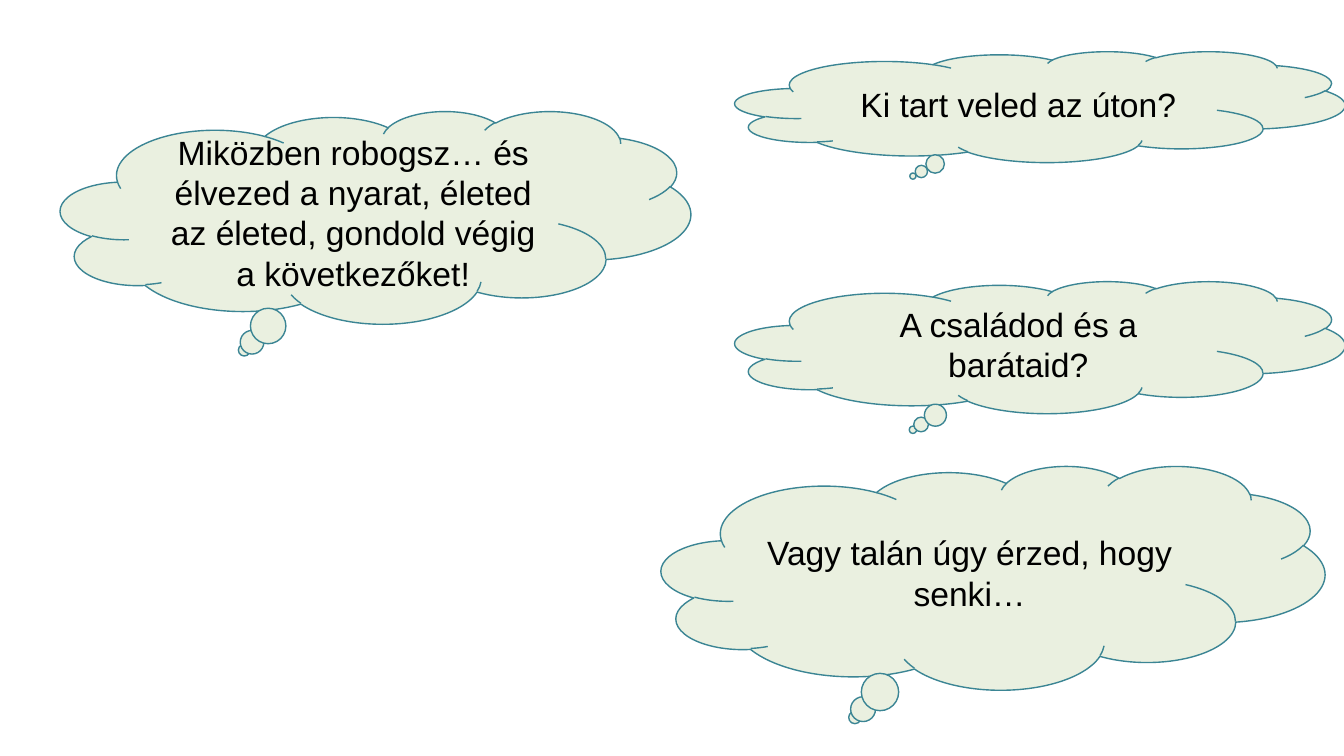
from pptx import Presentation
from pptx.dml.color import RGBColor
from pptx.enum.shapes import MSO_SHAPE
from pptx.enum.text import MSO_ANCHOR, PP_ALIGN
from pptx.util import Inches, Pt

PALE_GREEN = RGBColor(0xEA, 0xF0, 0xE0)
TEAL = RGBColor(0x3B, 0x85, 0x94)
BLACK = RGBColor(0x00, 0x00, 0x00)

# thought, (left, top, width, height) in inches
THOUGHTS = [
    ("Miközben robogsz… és élvezed a nyarat, életed az életed, gondold végig a következőket!",
     (0.6, 1.1, 6.25, 2.11)),
    ("Ki tart veled az úton?", (7.29, 0.51, 6.05, 1.1)),
    ("A családod és a barátaid?", (7.29, 2.79, 6.05, 1.31)),
    ("Vagy talán úgy érzed, hogy senki…", (6.56, 4.62, 6.58, 2.22)),
]


def add_thought_cloud(slide, thought, place):
    cloud = slide.shapes.add_shape(MSO_SHAPE.CLOUD_CALLOUT, *map(Inches, place))
    cloud.shadow.inherit = False
    cloud.fill.solid()
    cloud.fill.fore_color.rgb = PALE_GREEN
    cloud.line.color.rgb = TEAL
    cloud.line.width = Pt(1)

    frame = cloud.text_frame
    frame.word_wrap = True
    frame.vertical_anchor = MSO_ANCHOR.MIDDLE
    frame.text = thought
    paragraph = frame.paragraphs[0]
    paragraph.alignment = PP_ALIGN.CENTER
    font = paragraph.runs[0].font
    font.name = "Arial"
    font.size = Pt(24)
    font.color.rgb = BLACK


def main():
    presentation = Presentation()
    presentation.slide_width = Inches(13.33)
    presentation.slide_height = Inches(7.5)
    slide = presentation.slides.add_slide(presentation.slide_layouts[6])
    for thought, place in THOUGHTS:
        add_thought_cloud(slide, thought, place)
    presentation.save("out.pptx")


if __name__ == "__main__":
    main()
